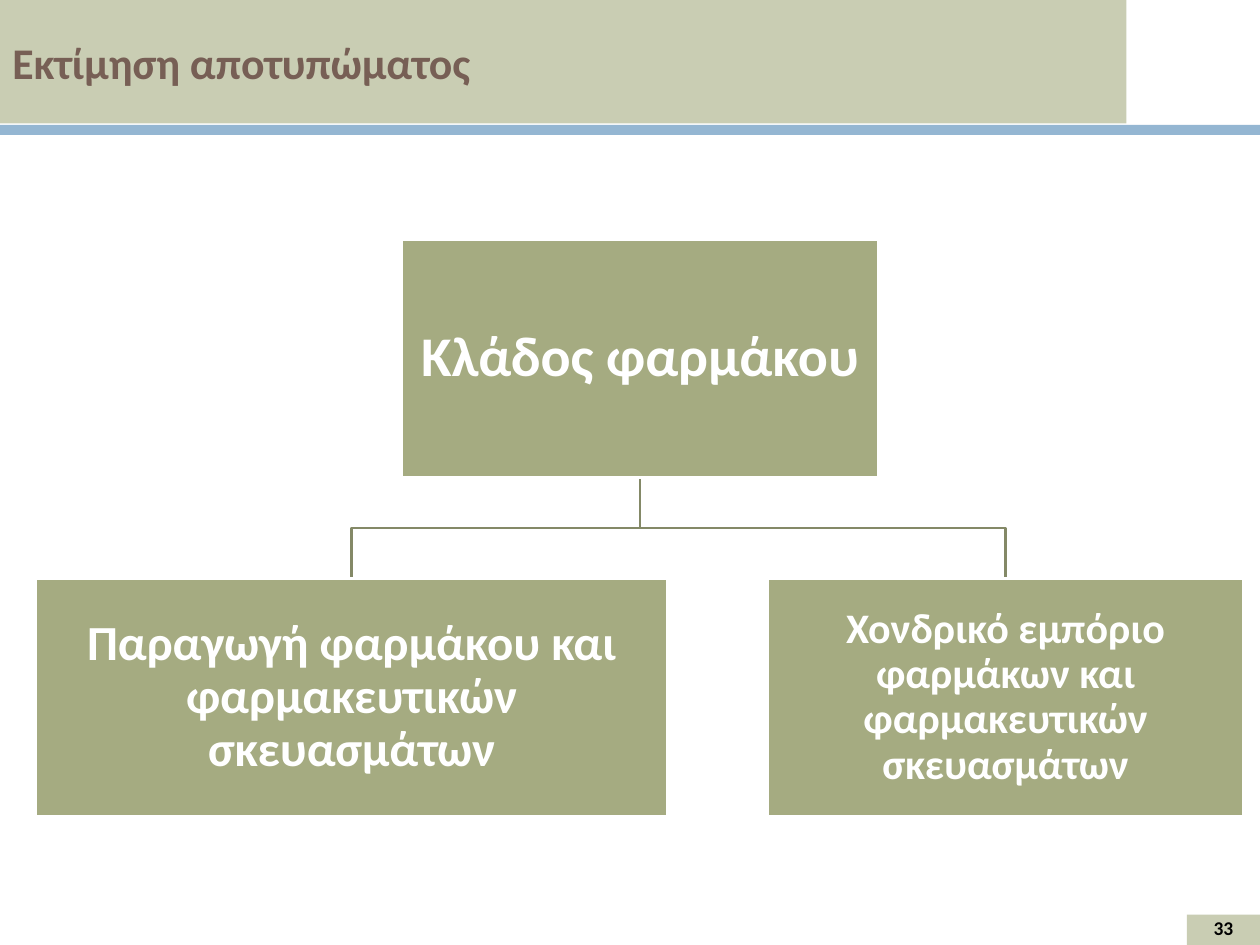
from pptx import Presentation
from pptx.dml.color import RGBColor as Rgb
from pptx.enum.shapes import MSO_SHAPE as Kind
from pptx.enum.text import MSO_ANCHOR as Anchor, PP_ALIGN as Align
from pptx.util import Inches as In, Pt

# Content: label, left, width, type size
TITLE = "Εκτίμηση αποτυπώματος"
PAGE = "33"
ROOT = ("Κλάδος φαρμάκου", 3.19, 3.78, 32)
LEAVES = [
    ("Παραγωγή φαρμάκου και φαρμακευτικών σκευασμάτων", 0.28, 5.02, 28),
    ("Χονδρικό εμπόριο φαρμάκων και φαρμακευτικών σκευασμάτων", 6.09, 3.78, 24),
]

THEME = {
    "font": "Calibri", "band": "C9CDB3", "rule": "94B6D2", "title": "775F55",
    "node": "A5AB81", "link": "848967", "light": "FFFFFF", "dark": "000000",
    "title_pt": 25, "page_pt": 11.1, "line_pt": 1.5,
}

# Grid: two rows of equal boxes, one gap between them
WIDE, HIGH = 10, 7.5
TOP, TALL, GAP = 1.9, 1.89, 0.8
ROWS = [TOP, TOP + TALL + GAP]
SIDE = 0.58

deck = Presentation()
deck.slide_width, deck.slide_height = In(WIDE), In(HIGH)
slide = deck.slides.add_slide(deck.slide_layouts[6])
shapes = slide.shapes


def tint(name):
    return Rgb.from_string(THEME[name])


def block(x, y, w, h, fill, edge=None):
    box = shapes.add_shape(Kind.RECTANGLE, In(x), In(y), In(w), In(h))
    box.shadow.inherit = False
    box.fill.solid()
    box.fill.fore_color.rgb = tint(fill)
    if edge:
        box.line.color.rgb = tint(edge)
        box.line.width = Pt(THEME["line_pt"])
    else:
        box.line.fill.background()
    return box


def write(box, text, size, color, align=Align.CENTER, pad=None, lead=1.0):
    frame = box.text_frame
    form = {"word_wrap": True, "vertical_anchor": Anchor.MIDDLE}
    if pad is not None:
        for side in ("left", "right", "top", "bottom"):
            form["margin_" + side] = In(pad)
    for key, value in form.items():
        setattr(frame, key, value)
    para = frame.paragraphs[0]
    para.alignment, para.line_spacing = align, lead
    run = para.add_run()
    run.text = text
    style = {"name": THEME["font"], "size": Pt(size), "bold": True}
    for key, value in style.items():
        setattr(run.font, key, value)
    run.font.color.rgb = tint(color)


def node(item, row):
    text, x, w, size = item
    box = block(x, ROWS[row], w, TALL, "node", "light")
    write(box, text, size, "light", pad=0.02, lead=0.9)


def link(start, end):
    """Draw an elbow from the root's foot to a leaf's head."""
    y, last = ROWS[0] + TALL, ROWS[1]
    mid = (y + last) / 2
    pen = shapes.build_freeform(In(start), In(y), scale=1.0)
    pen.add_line_segments(
        [(In(a), In(b)) for a, b in ((start, mid), (end, mid), (end, last))],
        close=False)
    line = pen.convert_to_shape()
    line.shadow.inherit = False
    line.fill.background()
    line.line.color.rgb = tint("link")
    line.line.width = Pt(THEME["line_pt"])


def center(item):
    return item[1] + item[2] / 2


# Page furniture
block(WIDE - SIDE, 7.26, SIDE, 0.24, "band")
block(0, 0.99, WIDE, 0.08, "rule")
head = block(0, 0, 8.94, 0.98, "band")
write(head, TITLE, THEME["title_pt"], "title", Align.JUSTIFY)
page = shapes.add_textbox(In(WIDE - SIDE), In(7.23), In(SIDE), In(0.27))
write(page, PAGE, THEME["page_pt"], "dark")

# Tree: links lie behind the boxes
for leaf in reversed(LEAVES):
    link(center(ROOT), center(leaf))
node(ROOT, 0)
for leaf in LEAVES:
    node(leaf, 1)

deck.save("out.pptx")
